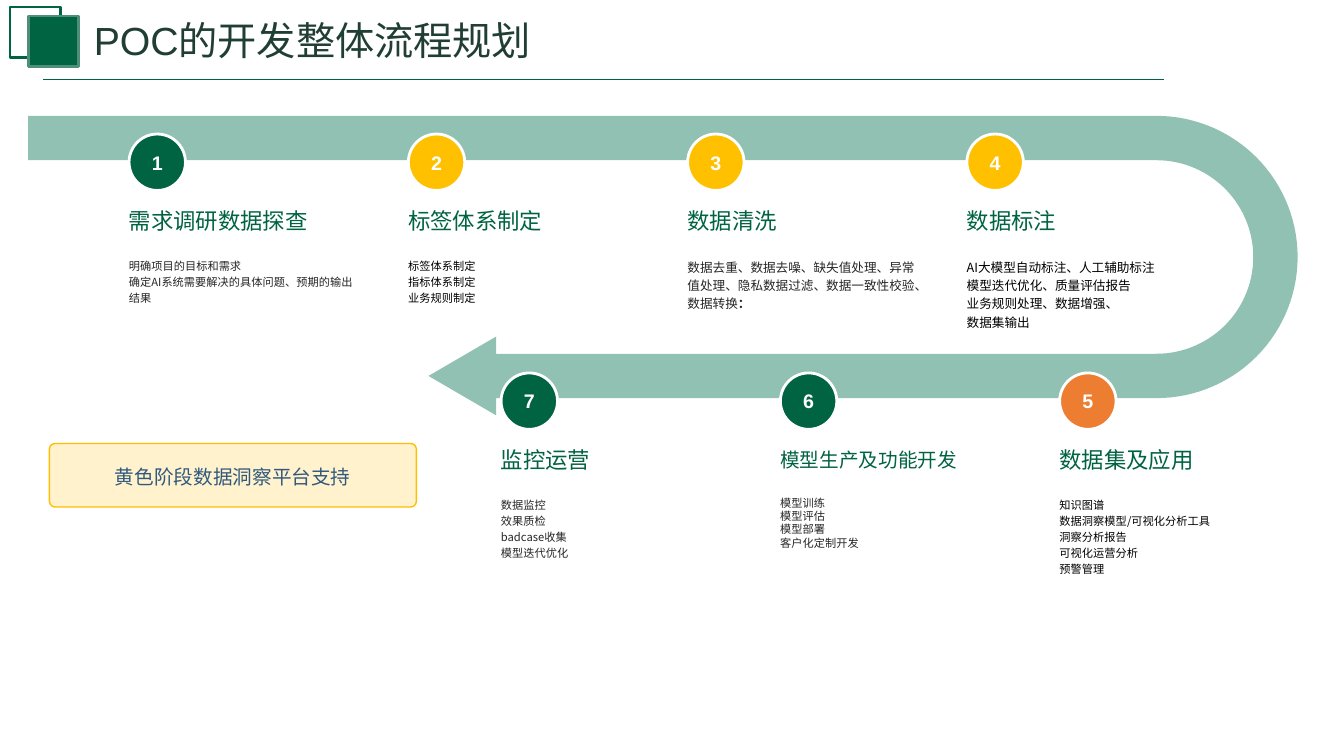
from dataclasses import dataclass
from math import cos, pi, sin
from typing import Any

from lxml.etree import SubElement
from pptx import Presentation
from pptx.dml.color import RGBColor
from pptx.enum.shapes import MSO_CONNECTOR, MSO_SHAPE
from pptx.enum.text import MSO_ANCHOR, MSO_AUTO_SIZE, PP_ALIGN
from pptx.oxml.ns import qn
from pptx.util import Emu, Pt

PX = 9144
GREEN = RGBColor(0x00, 0x63, 0x41)
MID_GREEN = RGBColor(0x4F, 0x8E, 0x7A)
PALE_GREEN = RGBColor(0x91, 0xC1, 0xB2)
TITLE_GREEN = RGBColor(0x20, 0x3E, 0x34)
YELLOW = RGBColor(0xFF, 0xC0, 0x00)
AMBER = RGBColor(0xFF, 0xBE, 0x00)
CREAM = RGBColor(0xFF, 0xF2, 0xCC)
ORANGE = RGBColor(0xED, 0x7D, 0x31)
BLUE = RGBColor(0x31, 0x59, 0x7F)
WHITE = RGBColor(0xFF, 0xFF, 0xFF)
BLACK = RGBColor(0x00, 0x00, 0x00)
DARK = RGBColor(0x26, 0x26, 0x26)
SANS = "Noto Sans CJK SC"

PITCH = 277
BADGE = 56
TOP_ROW, BOTTOM_ROW = 133, 370
TOP_LEFT, BOTTOM_LEFT = 128, 497


@dataclass(frozen=True)
class Step:
    number: int
    column: int
    heading: str
    lines: tuple[str, ...]
    badge: RGBColor
    ink: RGBColor
    body_height: int
    body_width: int = 246
    body_size: int = 8
    heading_size: int = 16
    heading_width: int = 246
    spacing: float = 1.2
    tail: str = ""


STEPS = (
    Step(1, 0, "需求调研数据探查",
         ("明确项目的目标和需求", "确定AI系统需要解决的具体问题、预期的输出结果"),
         GREEN, DARK, 95),
    Step(2, 1, "标签体系制定", ("标签体系制定", "指标体系制定", "业务规则制定"),
         YELLOW, BLACK, 95),
    Step(3, 2, "数据清洗",
         ("数据去重、数据去噪、缺失值处理、异常值处理、隐私数据过滤、数据一致性校验、数据转换",),
         YELLOW, DARK, 71, body_size=9, tail="："),
    Step(4, 3, "数据标注",
         ("AI大模型自动标注、人工辅助标注", "模型迭代优化、质量评估报告",
          "业务规则处理、数据增强、", "数据集输出"),
         YELLOW, BLACK, 103, body_width=280, body_size=9),
    Step(5, 2, "数据集及应用",
         ("知识图谱", "数据洞察模型/可视化分析工具", "洞察分析报告", "可视化运营分析", "预警管理"),
         ORANGE, BLACK, 120),
    Step(6, 1, "模型生产及功能开发", ("模型训练", "模型评估", "模型部署", "客户化定制开发"),
         GREEN, DARK, 89, heading_size=14, heading_width=261, spacing=1.0),
    Step(7, 0, "监控运营", ("数据监控", "效果质检", "badcase收集", "模型迭代优化"),
         GREEN, DARK, 121),
)


def px(*values: float) -> list[Emu]:
    return [Emu(round(v * PX)) for v in values]


def apply(target: Any, values: dict[str, Any]) -> None:
    for name, value in values.items():
        setattr(target, name, value)


def add_run(p: Any, text: str, size: int, color: RGBColor,
            font: str = SANS, bold: bool = False) -> None:
    r = p.add_run()
    r.text = text
    apply(r.font, {"size": Pt(size), "name": font, "bold": bold})
    r.font.color.rgb = color
    SubElement(r.font._element, qn("a:ea")).set("typeface", SANS)


def write(sp: Any, lines: tuple[str, ...], size: int, color: RGBColor,
          font: str = SANS, bold: bool = False, anchor: MSO_ANCHOR = MSO_ANCHOR.MIDDLE,
          align: PP_ALIGN = PP_ALIGN.LEFT, spacing: float = 1.0) -> Any:
    tf = sp.text_frame
    apply(tf, {"word_wrap": True, "auto_size": MSO_AUTO_SIZE.NONE,
               "vertical_anchor": anchor})
    for i, line in enumerate(lines):
        p = tf.add_paragraph() if i else tf.paragraphs[0]
        apply(p, {"alignment": align, "line_spacing": spacing,
                  "space_before": Pt(0), "space_after": Pt(0)})
        add_run(p, line, size, color, font, bold)
    return tf


def add_box(slide: Any, kind: MSO_SHAPE, box: tuple[int, int, int, int],
            fill: RGBColor | None, line: RGBColor, width: float,
            radius: float | None = None) -> Any:
    sp = slide.shapes.add_shape(kind, *px(*box))
    sp.shadow.inherit = False
    if fill is None:
        sp.fill.background()
    else:
        sp.fill.solid()
        sp.fill.fore_color.rgb = fill
    sp.line.color.rgb = line
    sp.line.width = Pt(width)
    if radius is not None:
        sp.adjustments[0] = radius
    return sp


def add_header(slide: Any) -> None:
    title = slide.shapes.title
    apply(title, dict(zip(("left", "top", "width", "height"), px(83, 11, 609, 57))))
    tf = write(title, ("POC的开发整体流程规划",), 28, TITLE_GREEN, "Arial",
               anchor=MSO_ANCHOR.TOP)
    tf.auto_size = MSO_AUTO_SIZE.SHAPE_TO_FIT_TEXT
    rule = slide.shapes.add_connector(MSO_CONNECTOR.STRAIGHT, *px(43, 79, 1154, 79))
    rule.line.color.rgb = GREEN
    rule.line.width = Pt(1.25)
    SubElement(rule._element.spPr, qn("a:effectLst"))
    add_box(slide, MSO_SHAPE.RECTANGLE, (10, 7, 50, 50), None, GREEN, 2)
    add_box(slide, MSO_SHAPE.RECTANGLE, (28, 16, 50, 50), GREEN, MID_GREEN, 2)


def add_ribbon(slide: Any) -> None:
    start, bend, mid, outer, inner = 28, 1147, 255, 140, 96
    neck, tip, barb = 492, 425, 39
    center = mid + (outer + inner) // 2

    def arc(radius: int) -> list[tuple[float, float]]:
        angles = [pi * (i / 60 - 0.5) for i in range(61)]
        return [(bend + radius * cos(a), mid + radius * sin(a)) for a in angles]

    points = [
        *arc(outer), (neck, mid + outer), (neck, center + barb), (tip, center),
        (neck, center - barb), (neck, mid + inner), *reversed(arc(inner)),
        (start, mid - inner),
    ]
    builder = slide.shapes.build_freeform(*px(start, mid - outer), scale=1.0)
    builder.add_line_segments([tuple(px(*point)) for point in points], close=True)
    sp = builder.convert_to_shape()
    sp.shadow.inherit = False
    sp.fill.solid()
    sp.fill.fore_color.rgb = PALE_GREEN
    sp.line.fill.background()


def add_step(slide: Any, step: Step) -> None:
    upper = step.number <= 4
    top = TOP_ROW if upper else BOTTOM_ROW
    left = (TOP_LEFT if upper else BOTTOM_LEFT) + step.column * PITCH
    heading = slide.shapes.add_textbox(*px(left - 10, top + 55, step.heading_width, 62))
    write(heading, (step.heading,), step.heading_size, GREEN)
    body = slide.shapes.add_textbox(
        *px(left - 10, top + 117, step.body_width, step.body_height))
    tf = write(body, step.lines, step.body_size, step.ink,
               anchor=MSO_ANCHOR.TOP, spacing=step.spacing)
    if step.tail:
        add_run(tf.paragraphs[-1], step.tail, step.body_size, step.ink,
                "Times New Roman", True)
    badge = add_box(slide, MSO_SHAPE.ROUNDED_RECTANGLE, (left, top, BADGE, BADGE),
                    step.badge, WHITE, 2, 0.5)
    write(badge, (str(step.number),), 14, WHITE, "Arial", True, align=PP_ALIGN.CENTER)


def main() -> None:
    prs = Presentation()
    prs.slide_width, prs.slide_height = px(1333, 750)
    slide = prs.slides.add_slide(prs.slide_layouts[5])
    add_header(slide)
    add_ribbon(slide)
    for step in STEPS:
        add_step(slide, step)
    legend = add_box(slide, MSO_SHAPE.ROUNDED_RECTANGLE, (49, 440, 364, 63),
                     CREAM, AMBER, 1, 0.09)
    write(legend, ("黄色阶段数据洞察平台支持",), 14, BLUE,
          align=PP_ALIGN.CENTER, spacing=1.1)
    prs.save("out.pptx")


if __name__ == "__main__":
    main()
